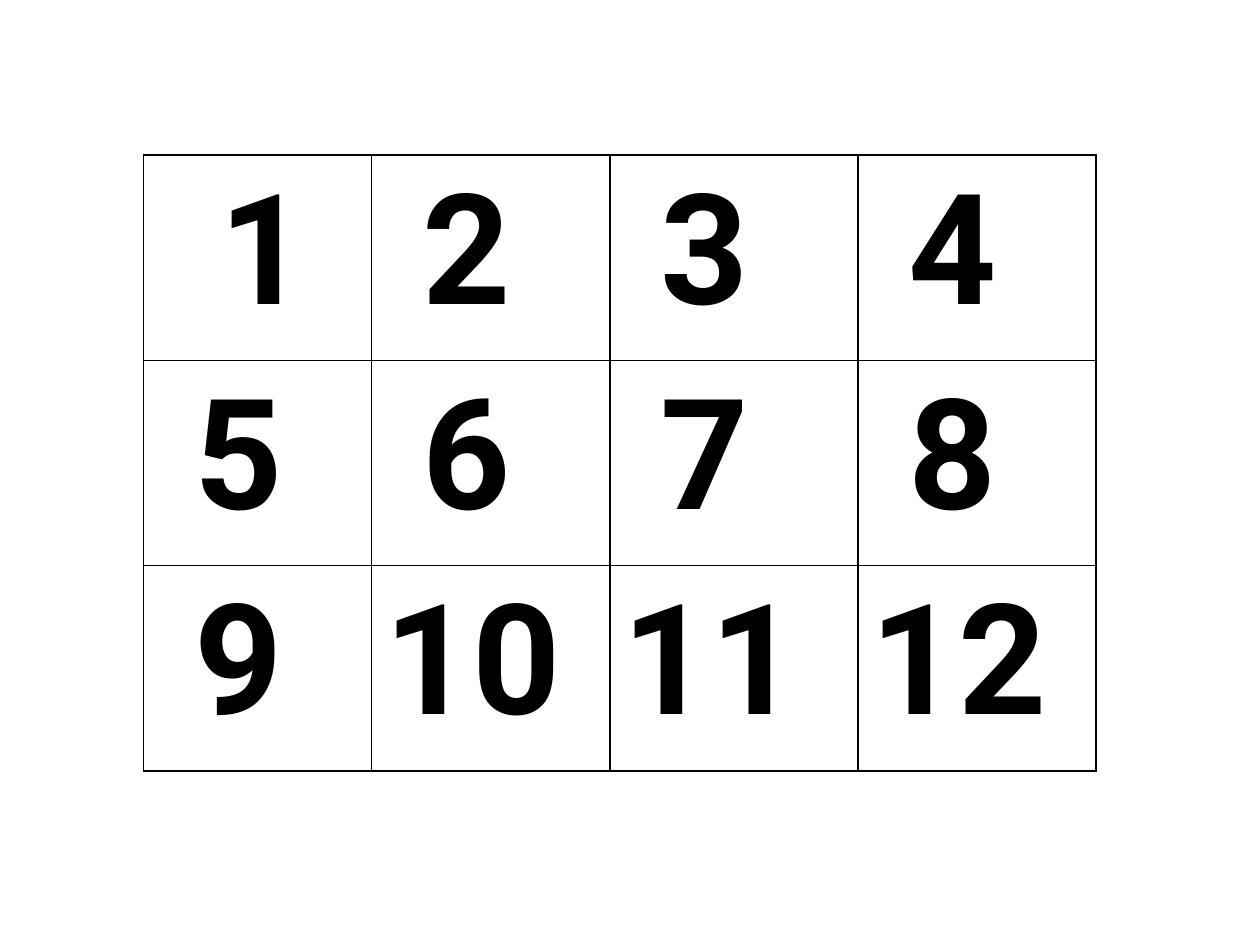
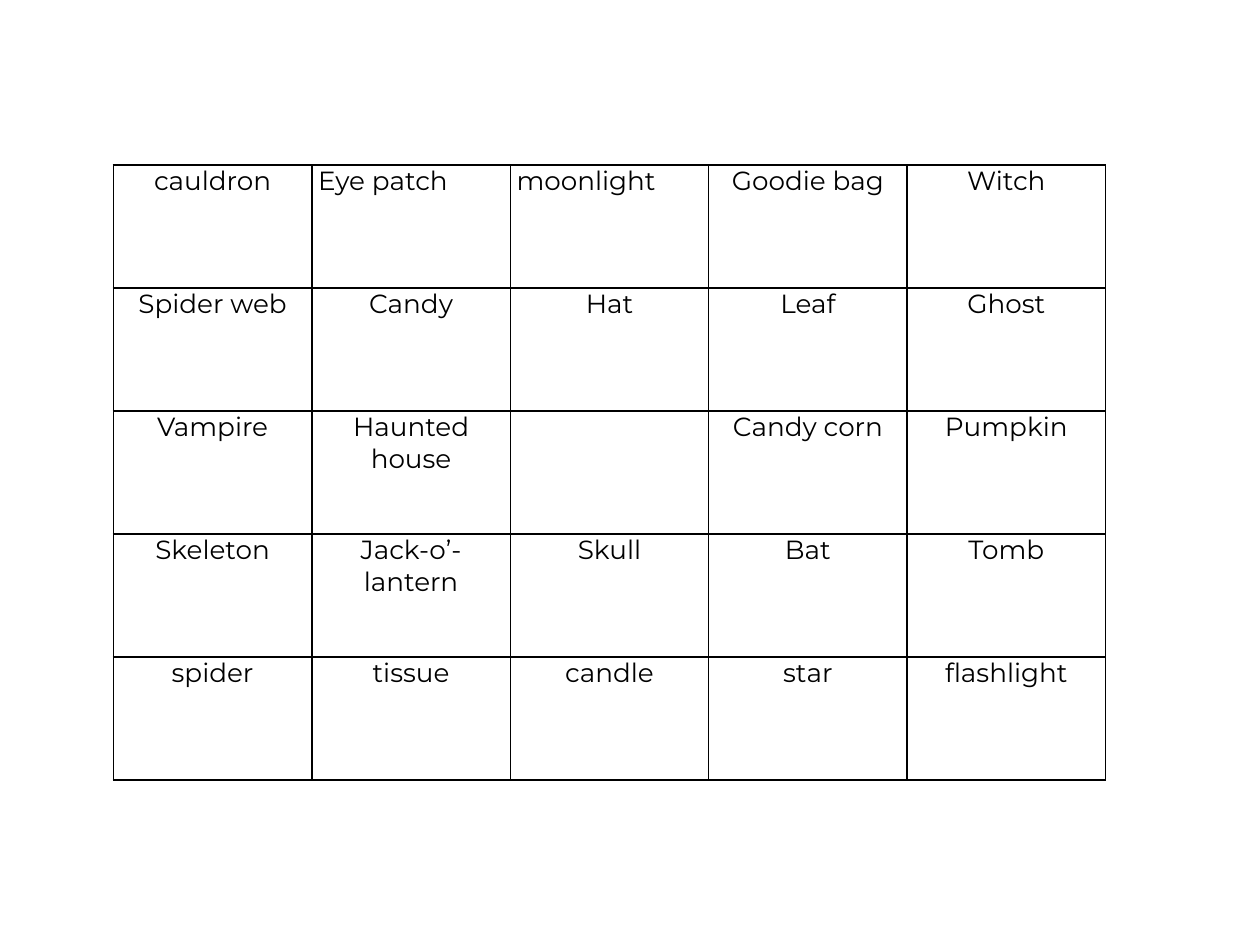
import dataclasses

import lxml.etree
import pptx
import pptx.dml.color
import pptx.enum.text
import pptx.oxml.ns
import pptx.util

Inches = pptx.util.Inches
Pt = pptx.util.Pt
ALIGN = pptx.enum.text.PP_ALIGN


@dataclasses.dataclass(frozen=True)
class Theme:
    ink: str = "000000"
    border_width: float = 1
    number_font: str = "Roboto"
    number_size: float = 88
    word_font: str = "Montserrat"
    word_size: float = 15


THEME = Theme()
BLANK_LAYOUT = 6

NUMBER_COLUMNS = [1.81, 1.89, 1.97, 1.89]
NUMBER_ROWS = 3
FIRST_INDENT = 0.5
SINGLE_DIGIT_INDENT = 0.3

WORDS = [
    ["cauldron", "Eye patch", "moonlight", "Goodie bag", "Witch"],
    ["Spider web", "Candy", "Hat", "Leaf", "Ghost"],
    ["Vampire", "Haunted house", "", "Candy corn", "Pumpkin"],
    ["Skeleton", "Jack-o’-lantern", "Skull", "Bat", "Tomb"],
    ["spider", "tissue", "candle", "star", "flashlight"],
]
LEFT_ALIGNED_WORDS = {"Eye patch", "moonlight"}


def write_text(text_frame, text, *, font, size, bold=False,
               align=ALIGN.LEFT, indent=0):
    """Put one formatted paragraph into a text frame."""
    paragraph = text_frame.paragraphs[0]
    paragraph.alignment = align
    if indent:
        properties = paragraph._p.get_or_add_pPr()
        properties.set("marL", str(Inches(indent)))
        properties.set("indent", "0")
    run = paragraph.add_run()
    run.text = text
    run.font.name = font
    run.font.size = Pt(size)
    run.font.bold = bold
    run.font.color.rgb = pptx.dml.color.RGBColor.from_string(THEME.ink)


def draw_borders(cell):
    """Outline all four sides of a cell."""
    qualified = pptx.oxml.ns.qn
    properties = cell._tc.get_or_add_tcPr()
    for side in ("a:lnL", "a:lnR", "a:lnT", "a:lnB"):
        line = lxml.etree.SubElement(properties, qualified(side),
                                     w=str(Pt(THEME.border_width)))
        fill = lxml.etree.SubElement(line, qualified("a:solidFill"))
        lxml.etree.SubElement(fill, qualified("a:srgbClr"), val=THEME.ink)


def add_grid(slide, left, top, column_widths, row_height, row_count):
    """Add a plain bordered table with equal rows."""
    table = slide.shapes.add_table(
        row_count, len(column_widths), Inches(left), Inches(top),
        Inches(sum(column_widths)), Inches(row_height * row_count)).table
    table.first_row = False
    table.horz_banding = False
    for column, width in zip(table.columns, column_widths):
        column.width = Inches(width)
    for row in table.rows:
        row.height = Inches(row_height)
    for cell in table.iter_cells():
        draw_borders(cell)
        cell.fill.background()
    return table


def add_number_slide(presentation):
    slide = presentation.slides.add_slide(presentation.slide_layouts[BLANK_LAYOUT])
    table = add_grid(slide, 1.14, 1.23, NUMBER_COLUMNS, 1.63, NUMBER_ROWS)
    for number, cell in enumerate(table.iter_cells(), start=1):
        if number == 1:
            indent = FIRST_INDENT
        else:
            indent = SINGLE_DIGIT_INDENT if number < 10 else 0
        write_text(cell.text_frame, str(number), font=THEME.number_font,
                   size=THEME.number_size, bold=True, indent=indent)


def add_word_slide(presentation):
    slide = presentation.slides.add_slide(presentation.slide_layouts[BLANK_LAYOUT])
    table = add_grid(slide, 0.9, 1.31, [1.575] * len(WORDS[0]), 0.976, len(WORDS))
    for row, words in zip(table.rows, WORDS):
        for cell, word in zip(row.cells, words):
            if not word:
                continue
            cell.margin_left = cell.margin_right = Inches(0.05)
            cell.margin_top = cell.margin_bottom = 0
            align = ALIGN.LEFT if word in LEFT_ALIGNED_WORDS else ALIGN.CENTER
            write_text(cell.text_frame, word, font=THEME.word_font,
                       size=THEME.word_size, align=align)


def main():
    presentation = pptx.Presentation()
    presentation.slide_width = Inches(10)
    presentation.slide_height = Inches(7.5)

    # Number cards
    add_number_slide(presentation)

    # Halloween word board
    add_word_slide(presentation)

    presentation.save("out.pptx")


if __name__ == "__main__":
    main()
